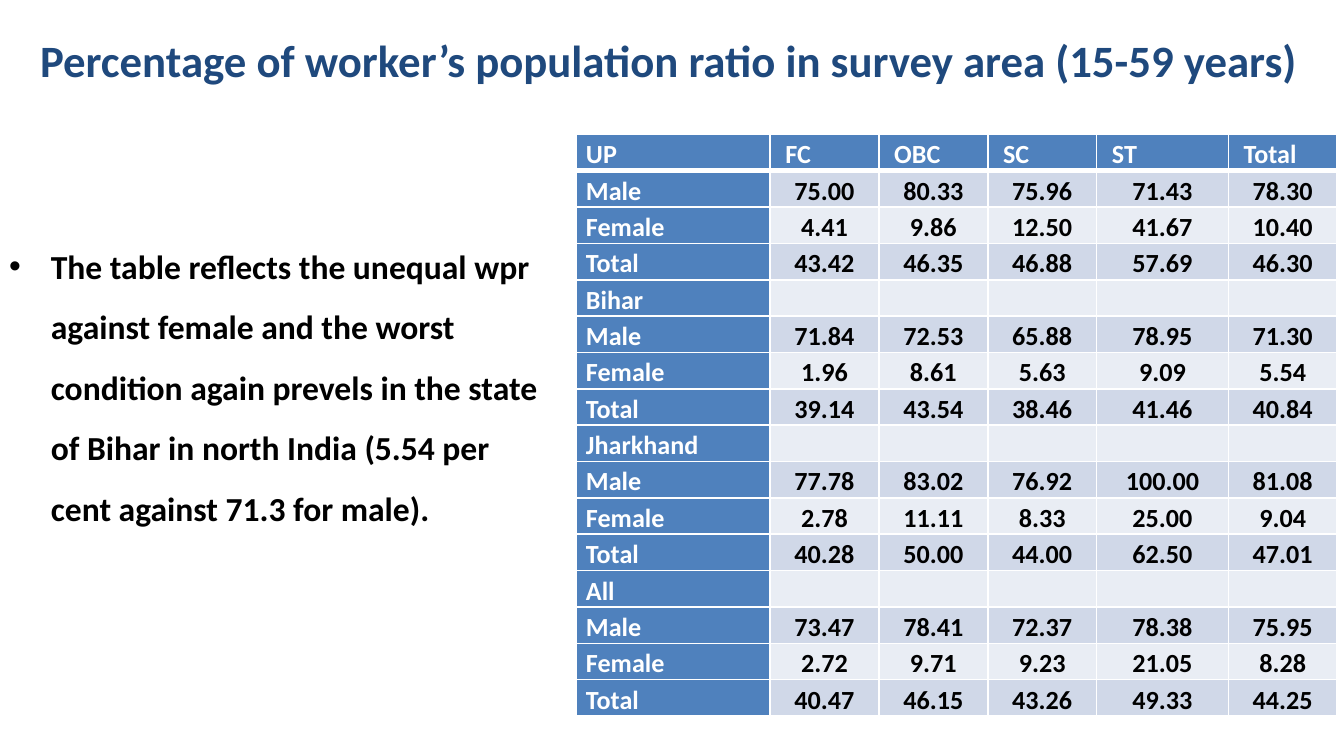
from dataclasses import dataclass

import lxml.etree
import pptx
import pptx.dml.color
import pptx.enum.text
import pptx.oxml.ns
import pptx.util

Inches = pptx.util.Inches
Pt = pptx.util.Pt
ANCHOR = pptx.enum.text.MSO_ANCHOR
ALIGN = pptx.enum.text.PP_ALIGN


@dataclass(frozen=True)
class Theme:
    font: str = "Calibri"
    title_color: str = "1F497D"
    text_color: str = "000000"
    light: str = "FFFFFF"
    accent: str = "4F81BD"
    bands: tuple[str, str] = ("D0D8E8", "E9EDF4")
    title_size: int = 24
    body_size: int = 18
    table_size: int = 14
    rule: int = 1
    header_rule: int = 3


@dataclass(frozen=True)
class Box:
    left: float
    top: float
    width: float
    height: float

    def lengths(self) -> tuple:
        return tuple(Inches(v) for v in (self.left, self.top, self.width, self.height))


@dataclass(frozen=True)
class Region:
    """Worker ratios of one region, by social group."""
    name: str
    male: str
    female: str
    total: str

    def rows(self) -> list[list[str]]:
        return [
            ["Male", *self.male.split()],
            ["Female", *self.female.split()],
            ["Total", *self.total.split()],
        ]


THEME = Theme()
SLIDE_WIDTH = 10
SLIDE_HEIGHT = SLIDE_WIDTH * 9 / 16
TITLE = "Percentage of worker’s population ratio in survey area (15-59 years)"
FINDING = (
    "The table reflects the unequal wpr against female and the worst condition "
    "again prevels in the state of Bihar in north India (5.54 per cent against "
    "71.3 for male)."
)
GROUPS = [" FC", " OBC", " SC", " ST", " Total"]
REGIONS = [
    Region("UP", "75.00 80.33 75.96 71.43 78.30",
           "4.41 9.86 12.50 41.67 10.40", "43.42 46.35 46.88 57.69 46.30"),
    Region("Bihar", "71.84 72.53 65.88 78.95 71.30",
           "1.96 8.61 5.63 9.09 5.54", "39.14 43.54 38.46 41.46 40.84"),
    Region("Jharkhand", "77.78 83.02 76.92 100.00 81.08",
           "2.78 11.11 8.33 25.00 9.04", "40.28 50.00 44.00 62.50 47.01"),
    Region("All", "73.47 78.41 72.37 78.38 75.95",
           "2.72 9.71 9.23 21.05 8.28", "40.47 46.15 43.26 49.33 44.25"),
]
COLUMN_WIDTHS = [1.44, 0.81, 0.81, 0.81, 0.98, 0.81]
TITLE_BOX = Box(0.2, 0.19, 9.8, 0.5)
FINDING_BOX = Box(-0.03, 1.63, 4.21, 2.77)
TABLE_BOX = Box(4.29, 1, sum(COLUMN_WIDTHS), 4.33)


def rgb(color: str) -> pptx.dml.color.RGBColor:
    return pptx.dml.color.RGBColor.from_string(color)


def format_runs(paragraph, size: int, color: str) -> None:
    for run in paragraph.runs:
        run.font.name = THEME.font
        run.font.size = Pt(size)
        run.font.bold = True
        run.font.color.rgb = rgb(color)


def add_text(slide, box: Box, text: str, size: int, color: str, anchor):
    """Add a wrapped text box and return its paragraph."""
    frame = slide.shapes.add_textbox(*box.lengths()).text_frame
    frame.word_wrap = True
    frame.vertical_anchor = anchor
    frame.text = text
    paragraph = frame.paragraphs[0]
    format_runs(paragraph, size, color)
    return paragraph


def add_bullet(paragraph, indent: float) -> None:
    properties = paragraph._p.get_or_add_pPr()
    properties.set("marL", str(Inches(indent)))
    properties.set("indent", str(-Inches(indent)))
    qn = pptx.oxml.ns.qn
    lxml.etree.SubElement(properties, qn("a:buFont"), typeface="Arial")
    lxml.etree.SubElement(properties, qn("a:buChar"), char="•")


def set_borders(cell, widths: dict[str, int]) -> None:
    """Draw the cell's borders; call before filling, as the schema wants lines first."""
    qn = pptx.oxml.ns.qn
    properties = cell._tc.get_or_add_tcPr()
    for side, width in widths.items():
        line = lxml.etree.SubElement(properties, qn(f"a:ln{side}"), w=str(Pt(width)))
        fill = lxml.etree.SubElement(line, qn("a:solidFill"))
        lxml.etree.SubElement(fill, qn("a:srgbClr"), val=THEME.light)


def fill_cell(cell, text: str, row: int, column: int) -> None:
    is_label = row == 0 or column == 0
    set_borders(cell, {
        "L": THEME.rule,
        "R": THEME.rule,
        "T": THEME.header_rule if row == 1 else THEME.rule,
        "B": THEME.header_rule if row == 0 else THEME.rule,
    })
    cell.fill.solid()
    cell.fill.fore_color.rgb = rgb(THEME.accent if is_label else THEME.bands[(row - 1) % 2])
    cell.margin_left = cell.margin_right = Inches(0.07)
    cell.margin_top = cell.margin_bottom = 0
    cell.vertical_anchor = ANCHOR.BOTTOM
    cell.text_frame.text = text
    paragraph = cell.text_frame.paragraphs[0]
    paragraph.alignment = ALIGN.LEFT if is_label else ALIGN.CENTER
    format_runs(paragraph, THEME.table_size, THEME.light if is_label else THEME.text_color)
    if not text:  # keeps empty rows as low as the others
        paragraph._p.get_or_add_endParaRPr().set("sz", str(THEME.table_size * 100))


def add_ratio_table(slide) -> None:
    rows: list[list[str]] = []
    for region in REGIONS:
        heads = [""] * len(GROUPS) if rows else GROUPS
        rows += [[region.name, *heads], *region.rows()]
    table = slide.shapes.add_table(
        len(rows), len(COLUMN_WIDTHS), *TABLE_BOX.lengths()).table
    for column, width in zip(table.columns, COLUMN_WIDTHS):
        column.width = Inches(width)
    for r, texts in enumerate(rows):
        table.rows[r].height = Inches(TABLE_BOX.height / len(rows))
        for c, text in enumerate(texts):
            fill_cell(table.cell(r, c), text, r, c)


def main() -> None:
    deck = pptx.Presentation()
    deck.slide_width, deck.slide_height = Inches(SLIDE_WIDTH), Inches(SLIDE_HEIGHT)
    slide = deck.slides.add_slide(deck.slide_layouts[6])
    add_ratio_table(slide)
    add_text(slide, TITLE_BOX, TITLE, THEME.title_size, THEME.title_color, ANCHOR.MIDDLE)
    finding = add_text(
        slide, FINDING_BOX, FINDING, THEME.body_size, THEME.text_color, ANCHOR.TOP)
    finding.line_spacing = 1.5
    add_bullet(finding, 0.31)
    deck.save("out.pptx")


if __name__ == "__main__":
    main()
